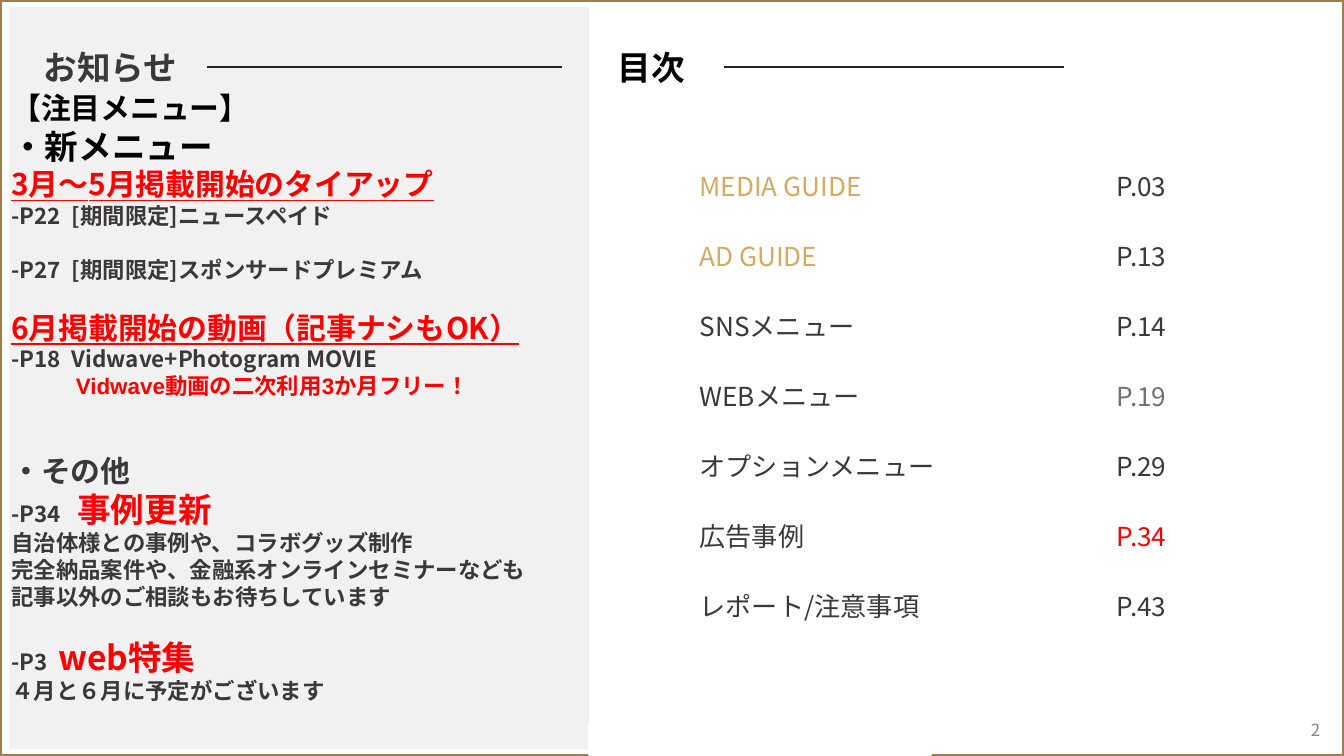
"""Build the notice and contents slide."""
import dataclasses
import typing

import lxml.etree
import pptx
import pptx.dml.color
import pptx.enum.shapes
import pptx.enum.text
import pptx.oxml.ns
import pptx.util


@dataclasses.dataclass(frozen=True)
class Theme:
    font: str = "Noto Sans CJK JP"
    plain: str = "Arial"
    black: str = "000000"
    dark: str = "3A3838"
    gray: str = "767171"
    pale: str = "888888"
    red: str = "FF0000"
    gold: str = "D8A961"
    frame: str = "A07D48"
    panel: str = "F1F1F1"
    white: str = "FFFFFF"
    rule: str = "252525"
    head: int = 18
    sub: int = 16
    entry: int = 14
    body: int = 12
    page: int = 9
    lead: float = 1.2


class Box(typing.NamedTuple):
    left: float
    top: float
    width: float
    height: float


class Run(typing.NamedTuple):
    text: str
    size: int
    color: str
    bold: bool = True
    under: bool = False
    face: str = Theme.font


class Line(typing.NamedTuple):
    runs: tuple[Run, ...]
    gap: int = 0
    tab: float = 0
    inset: float = 0


class Entry(typing.NamedTuple):
    name: str
    page: str
    tint: str = Theme.dark
    mark: str = Theme.dark


T = Theme()
WIDE = pptx.util.Inches(10)
HIGH = WIDE * 9 // 16


def across(share: float) -> int:
    return round(WIDE * share / 100)


def down(share: float) -> int:
    return round(HIGH * share / 100)


def frame(box: Box) -> tuple[int, int, int, int]:
    return across(box.left), down(box.top), across(box.width), down(box.height)


def rgb(color: str) -> pptx.dml.color.RGBColor:
    return pptx.dml.color.RGBColor.from_string(color)


def child(node, tag: str, **values: str):
    return lxml.etree.SubElement(node, pptx.oxml.ns.qn(tag), **values)


def rect(slide, box: Box, fill: str = "", line: str = "", width: float = 0) -> None:
    shape = slide.shapes.add_shape(pptx.enum.shapes.MSO_SHAPE.RECTANGLE, *frame(box))
    shape.shadow.inherit = False
    if fill:
        shape.fill.solid()
        shape.fill.fore_color.rgb = rgb(fill)
    else:
        shape.fill.background()
    if line:
        shape.line.color.rgb = rgb(line)
        shape.line.width = pptx.util.Pt(width)
    else:
        shape.line.fill.background()


def rule(slide, left: float, right: float, level: float) -> None:
    line = slide.shapes.add_connector(
        pptx.enum.shapes.MSO_CONNECTOR.STRAIGHT,
        across(left), down(level), across(right), down(level))
    line.line.color.rgb = rgb(T.rule)
    line.line.width = pptx.util.Pt(0.75)
    child(line._element.spPr, "a:effectLst")


def write(para, item: Run) -> None:
    run = para.add_run()
    run.text = item.text
    font = run.font
    font.size = pptx.util.Pt(item.size)
    font.bold, font.underline = item.bold, item.under
    font.color.rgb = rgb(item.color)
    font.name = item.face
    props = run._r.get_or_add_rPr()
    props.set("lang", "ja-JP")
    child(props, "a:ea", typeface=T.font)


def label(slide, box: Box, lines: tuple[Line, ...], pad: float = 0.01) -> None:
    text = slide.shapes.add_textbox(*frame(box)).text_frame
    text.word_wrap = True
    text.margin_left = pptx.util.Inches(0.01)
    text.margin_top = pptx.util.Inches(pad)
    text.margin_right = text.margin_bottom = 0
    for index, line in enumerate(lines):
        para = text.add_paragraph() if index else text.paragraphs[0]
        props = para._p.get_or_add_pPr()
        if line.inset:
            props.set("marL", str(pptx.util.Inches(line.inset)))
        if line.tab:
            tabs = child(props, "a:tabLst")
            child(tabs, "a:tab", pos=str(pptx.util.Inches(line.tab)), algn="l")
        tall = max(run.size for run in line.runs)
        para.line_spacing = pptx.util.Pt(tall * T.lead)
        if line.gap:
            para.space_before = pptx.util.Pt(line.gap * T.body * T.lead)
        for run in line.runs:
            write(para, run)


def index(slide, box: Box, split: float, rows: tuple[Entry, ...]) -> None:
    table = slide.shapes.add_table(len(rows), 2, *frame(box)).table
    table.first_row = table.horz_banding = False
    table.columns[0].width = across(split)
    table.columns[1].width = across(box.width - split)
    for row, entry in enumerate(rows):
        pairs = (entry.name, entry.tint), (entry.page, entry.mark)
        for col, (text, color) in enumerate(pairs):
            cell = table.cell(row, col)
            cell.fill.background()
            cell.vertical_anchor = pptx.enum.text.MSO_ANCHOR.MIDDLE
            write(cell.text_frame.paragraphs[0], Run(text, T.entry, color, False))


def number(slide, box: Box, text: str) -> None:
    area = slide.shapes.add_textbox(*frame(box)).text_frame
    area.word_wrap = True
    area.vertical_anchor = pptx.enum.text.MSO_ANCHOR.MIDDLE
    para = area.paragraphs[0]
    para.alignment = pptx.enum.text.PP_ALIGN.RIGHT
    write(para, Run(text, T.page, T.pale, False))


def note(text: str, gap: int = 0, tab: float = 0) -> Line:
    return Line((Run(text, T.body, T.dark),), gap, tab)


def head(text: str, size: int, color: str, gap: int = 0, under: bool = False) -> Line:
    return Line((Run(text, size, color, under=under),), gap)


def news(page: str, text: str, tab: float, gap: int = 0) -> Line:
    return Line((Run(page + "\t", T.body, T.dark), Run(text, T.head, T.red)), gap, tab)


NOTES = (
    head("【注目メニュー】", T.sub, T.black),
    head("・新メニュー", T.head, T.black),
    head("3月～5月掲載開始のタイアップ", T.sub, T.red, under=True),
    note("-P22\t[期間限定]ニュースペイド", tab=0.45),
    note("-P27\t[期間限定]スポンサードプレミアム", 1, 0.45),
    head("6月掲載開始の動画（記事ナシもOK）", T.sub, T.red, 1, True),
    note("-P18\tVidwave+Photogram MOVIE", tab=0.45),
    Line((Run("Vidwave動画の二次利用3か月フリー！", T.body, T.red, face=T.plain),), inset=0.48),
    head("・その他", T.sub, T.dark, 2),
    news("-P34", "事例更新", 0.49),
    note("自治体様との事例や、コラボグッズ制作"),
    note("完全納品案件や、金融系オンラインセミナーなども"),
    note("記事以外のご相談もお待ちしています"),
    news("-P3", "web特集", 0.35, 1),
    note("４月と６月に予定がございます"),
)
ENTRIES = (
    Entry("MEDIA GUIDE", "P.03", T.gold),
    Entry("AD GUIDE", "P.13", T.gold),
    Entry("SNSメニュー", "P.14"),
    Entry("WEBメニュー", "P.19", mark=T.gray),
    Entry("オプションメニュー", "P.29"),
    Entry("広告事例", "P.34", mark=T.red),
    Entry("レポート/注意事項", "P.43"),
)


def main() -> None:
    deck = pptx.Presentation()
    deck.slide_width, deck.slide_height = WIDE, HIGH
    slide = deck.slides.add_slide(deck.slide_layouts[6])
    rect(slide, Box(0, 0, 100, 100), line=T.frame, width=2.25)
    rect(slide, Box(0.7, 0.9, 43.15, 98.2), fill=T.panel)
    label(slide, Box(45.85, 6.05, 5.4, 5.5), (head("目次", T.head, T.black),))
    label(slide, Box(3.15, 6.05, 11.8, 5.5), (head("お知らせ", T.head, T.dark),))
    rule(slide, 15.4, 41.8, 8.85)
    rule(slide, 53.9, 79.2, 8.85)
    label(slide, Box(0.75, 10.3, 40.7, 83.6), NOTES, 0.09)
    number(slide, Box(96.3, 95, 2.9, 3), "2")
    index(slide, Box(51.05, 19.9, 40.6, 64.8), 31.05, ENTRIES)
    rect(slide, Box(43.9, 95.9, 25.3, 3.9), T.white, T.white, 2)
    deck.save("out.pptx")


if __name__ == "__main__":
    main()
